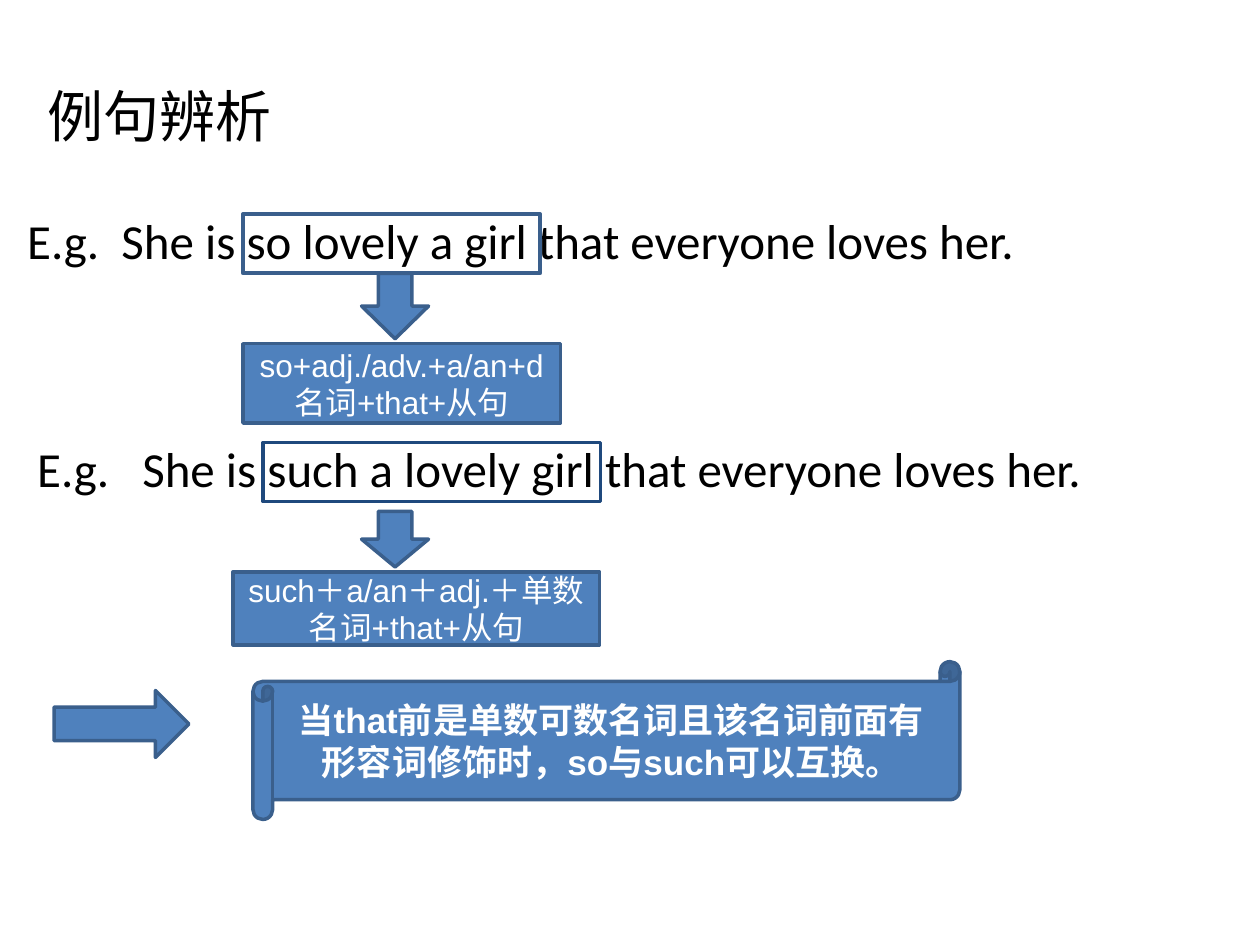
from dataclasses import dataclass

from lxml.etree import SubElement
from pptx import Presentation
from pptx.dml.color import RGBColor
from pptx.enum.shapes import MSO_SHAPE
from pptx.enum.text import MSO_ANCHOR, MSO_AUTO_SIZE, PP_ALIGN
from pptx.oxml.ns import qn
from pptx.util import Cm, Pt


@dataclass(frozen=True)
class Theme:
    text: RGBColor = RGBColor(0x00, 0x00, 0x00)
    light: RGBColor = RGBColor(0xFF, 0xFF, 0xFF)
    fill: RGBColor = RGBColor(0x4F, 0x81, 0xBD)
    edge: RGBColor = RGBColor(0x3A, 0x5F, 0x8C)
    dark_edge: RGBColor = RGBColor(0x1F, 0x49, 0x7D)
    heading_font: str = "Calibri"
    label_font: str = "Arial"
    title_size: int = 32
    sentence_size: int = 28
    label_size: int = 18
    rule_size: int = 20


class SlideBuilder:
    def __init__(self, slide, theme):
        self.slide = slide
        self.theme = theme

    def set_text(self, sp, text, font, size, color, bold=False,
                 align=PP_ALIGN.LEFT, anchor=MSO_ANCHOR.TOP, tab=None):
        tf = sp.text_frame
        tf.word_wrap = True
        tf.auto_size = MSO_AUTO_SIZE.NONE
        tf.vertical_anchor = anchor
        p = tf.paragraphs[0]
        p.text = text
        p.alignment = align
        if tab:
            tabs = SubElement(p._p.get_or_add_pPr(), qn("a:tabLst"))
            SubElement(tabs, qn("a:tab"), pos=str(Cm(tab)), algn="l")
        p.font.name = font
        p.font.size = Pt(size)
        p.font.bold = bold
        p.font.color.rgb = color

    def title(self, text, x, y, w, h):
        sp = self.slide.shapes.title
        sp.left, sp.top, sp.width, sp.height = Cm(x), Cm(y), Cm(w), Cm(h)
        t = self.theme
        self.set_text(sp, text, t.heading_font, t.title_size, t.text)

    def sentence(self, text, x, y, w, h, tab):
        sp = self.slide.shapes.add_textbox(Cm(x), Cm(y), Cm(w), Cm(h))
        t = self.theme
        self.set_text(sp, text, t.heading_font, t.sentence_size, t.text,
                      tab=tab)

    def outline(self, kind, x, y, w, h, color, weight=2):
        sp = self.slide.shapes.add_shape(kind, Cm(x), Cm(y), Cm(w), Cm(h))
        sp.shadow.inherit = False
        sp.fill.background()
        sp.line.color.rgb = color
        sp.line.width = Pt(weight)
        return sp

    def solid(self, kind, x, y, w, h):
        sp = self.outline(kind, x, y, w, h, self.theme.edge)
        sp.fill.solid()
        sp.fill.fore_color.rgb = self.theme.fill
        return sp

    def label(self, kind, text, x, y, w, h, size, bold=False):
        sp = self.solid(kind, x, y, w, h)
        t = self.theme
        self.set_text(sp, text, t.label_font, size, t.light, bold,
                      PP_ALIGN.CENTER, MSO_ANCHOR.MIDDLE)


def main():
    prs = Presentation()
    prs.slide_width, prs.slide_height = Cm(25.4), Cm(19.05)
    theme = Theme()
    s = SlideBuilder(prs.slides.add_slide(prs.slide_layouts[5]), theme)

    s.title("例句辨析", 0.71, 1.52, 7.09, 1.6)

    # First example: sentence, framed phrase, arrow and pattern
    s.sentence("E.g.\tShe is so lovely a girl that everyone loves her.",
               0.3, 4.11, 21, 2.64, tab=1.9)
    s.solid(MSO_SHAPE.DOWN_ARROW, 7.29, 5.51, 1.35, 1.32)
    s.outline(MSO_SHAPE.FLOWCHART_PROCESS, 4.9, 4.32, 5.99, 1.19,
              theme.edge, 2.25)
    s.label(MSO_SHAPE.RECTANGLE, "so+adj./adv.+a/an+d名词+that+从句",
            4.9, 6.93, 6.4, 1.6, theme.label_size)

    # Second example
    s.sentence("E.g.\tShe is such a lovely girl that everyone loves her.",
               0.5, 8.71, 23.47, 1.45, tab=2.12)
    s.outline(MSO_SHAPE.RECTANGLE, 5.3, 8.92, 6.81, 1.19, theme.dark_edge)
    s.solid(MSO_SHAPE.DOWN_ARROW, 7.29, 10.31, 1.35, 1.12)
    s.label(MSO_SHAPE.RECTANGLE, "such＋a/an＋adj.＋单数名词+that+从句",
            4.7, 11.53, 7.39, 1.47, theme.label_size)

    # Conclusion
    s.solid(MSO_SHAPE.RIGHT_ARROW, 1.09, 13.92, 2.72, 1.35)
    s.label(MSO_SHAPE.HORIZONTAL_SCROLL,
            "当that前是单数可数名词且该名词前面有形容词修饰时，so与such可以互换。",
            5.1, 13.34, 14.25, 3.18, theme.rule_size, bold=True)

    prs.save("out.pptx")


if __name__ == "__main__":
    main()
